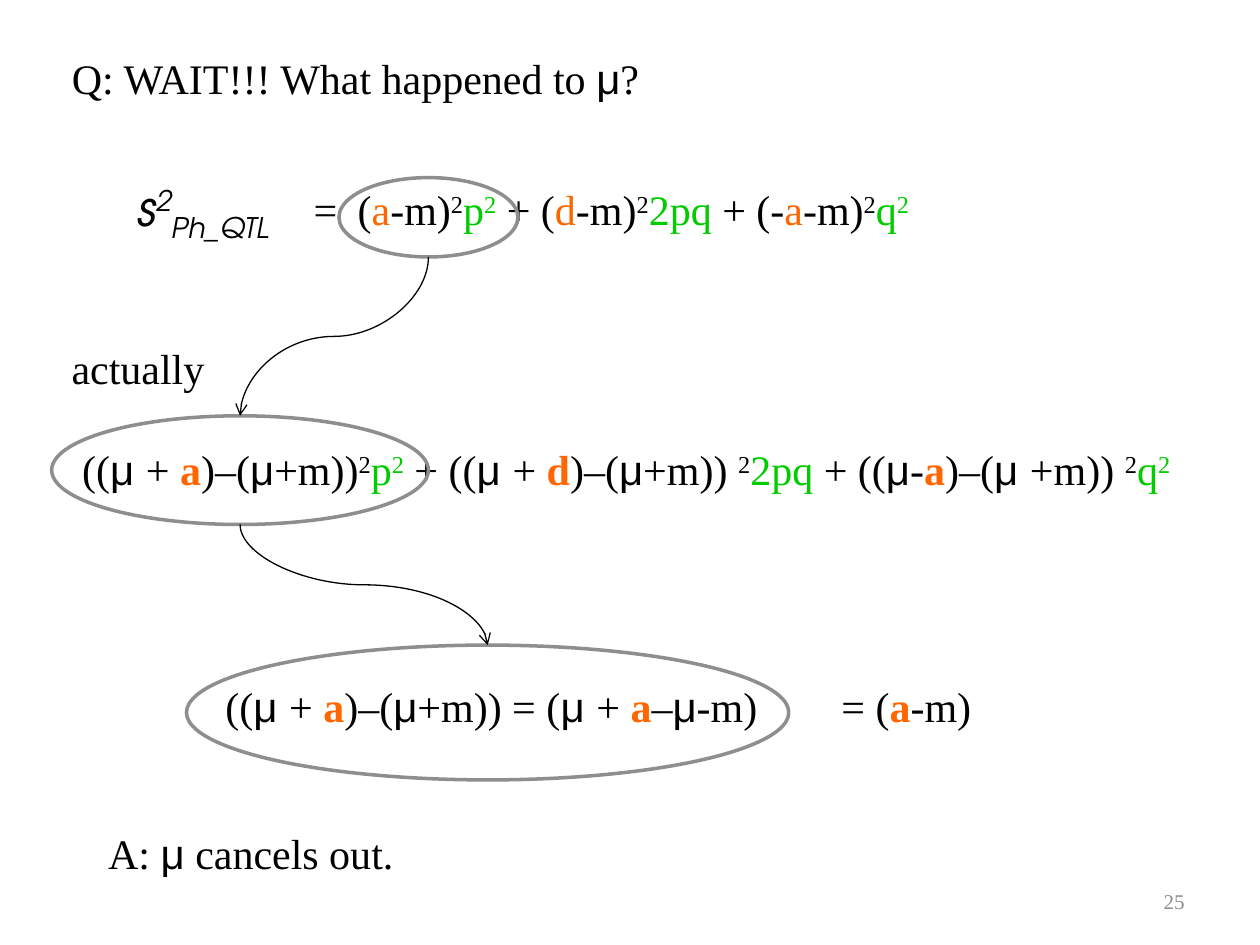
import pptx
import pptx.dml.color
import pptx.enum.shapes
import pptx.enum.text
import pptx.oxml.ns
import pptx.util
from lxml import etree

RGB = pptx.dml.color.RGBColor
BLACK = RGB(0x00, 0x00, 0x00)
ORANGE = RGB(0xFF, 0x66, 0x00)
GREEN = RGB(0x00, 0xCC, 0x00)
GREY = RGB(0x8E, 0x8E, 0x8E)
NUMBER_GREY = RGB(0x8C, 0x8C, 0x8C)
SERIF, SANS, SCRIPT = "Times New Roman", "Arial", "TeX Gyre Adventor"
WIDTH, HEIGHT = pptx.util.Inches(10), pptx.util.Inches(7.5)

QUESTION = "Q: WAIT!!! What happened to |μ|?"
VARIANCE = "i~s|i^~2|i_~Ph_QTL"
SHORT_FORM = ("=\t(|o~a|-m)|^~2|g~p|g^~2| + (|o~d|-m)|^~2|g~2pq"
              "| + (-|o~a|-m)|^~2|g~q|g^~2")
FULL_FORM = (" ((|μ |+ |ob~a|)–(|μ|+m))|^~2|g~p|g^~2"
             "| + ((|μ |+ |ob~d|)–(|μ|+m)) |^~2|g~2pq"
             "| + ((|μ|-|ob~a|)–(|μ |+m)) |^~2|g~q|g^~2")
CANCELLING = "((|μ |+ |ob~a|)–(|μ|+m)) = (|μ |+ |ob~a|–|μ|-m)\t= (|ob~a|-m)"
ANSWER = "A: |μ| cancels out."


def box(x, y, w, h):
    """Turn percentages of the slide into left, top, width and height."""
    return [int(share * side / 100)
            for share, side in zip((x, y, w, h), (WIDTH, HEIGHT) * 2)]


def child(parent, tag, **attributes):
    """Append a drawing element to a parent."""
    return etree.SubElement(parent, pptx.oxml.ns.qn(tag), attributes)


def write(p, markup, size=24, font=SERIF):
    """Add runs split by |, each with optional style letters before ~."""
    for part in markup.split("|"):
        style, _, text = part.rpartition("~")
        r = p.add_run()
        r.text = text
        f = r.font
        f.size = pptx.util.Pt(size)
        f.name = SANS if "μ" in text else font
        f.color.rgb = ORANGE if "o" in style else GREEN if "g" in style else BLACK
        f.bold = "b" in style
        f.italic = "i" in style
        if "^" in style or "_" in style:
            f._element.set("baseline", "30000" if "^" in style else "-25000")


def add_text(s, place, *lines, wrap=False, tab=None, gap=0, **look):
    """Add a text box with one marked-up paragraph per line."""
    tf = s.shapes.add_textbox(*box(*place)).text_frame
    tf.word_wrap = wrap
    for i, line in enumerate(lines):
        p = tf.add_paragraph() if i else tf.paragraphs[0]
        if i:
            p.space_before = pptx.util.Pt(gap)
        if tab:
            tabs = child(p._p.get_or_add_pPr(), "a:tabLst")
            child(tabs, "a:tab", pos=str(int(tab * WIDTH / 100)), algn="l")
        write(p, line, **look)


def add_title(s, place, markup):
    """Place the title and fill it with marked-up text."""
    sp = s.shapes.title
    sp.left, sp.top, sp.width, sp.height = box(*place)
    tf = sp.text_frame
    tf.word_wrap = False
    tf.auto_size = pptx.enum.text.MSO_AUTO_SIZE.NONE
    tf.vertical_anchor = pptx.enum.text.MSO_ANCHOR.TOP
    tf.paragraphs[0].alignment = pptx.enum.text.PP_ALIGN.LEFT
    write(tf.paragraphs[0], markup)


def add_ring(s, place):
    """Add a hollow grey ellipse."""
    sp = s.shapes.add_shape(pptx.enum.shapes.MSO_SHAPE.OVAL, *box(*place))
    sp.shadow.inherit = False
    sp.fill.background()
    sp.line.color.rgb = GREY
    sp.line.width = pptx.util.Pt(2)
    return sp


def add_curve(s, upper, lower):
    """Draw a curved arrow from the bottom of one ring to the top of the next."""
    x1, y1 = upper.left + upper.width // 2, upper.top + upper.height
    x2, y2 = lower.left + lower.width // 2, lower.top
    cx, cy = (x1 + x2) // 2, (y1 + y2) // 2
    half_w, half_h = (y2 - y1) // 2, abs(x2 - x1) // 2
    side = 1 if x2 > x1 else -1
    c = s.shapes.add_connector(
        pptx.enum.shapes.MSO_CONNECTOR.CURVE,
        cx + side * half_w, cy - half_h, cx - side * half_w, cy + half_h)
    c.line.color.rgb = BLACK
    c.line.width = pptx.util.Pt(0.75)
    child(c.line._get_or_add_ln(), "a:tailEnd", type="arrow")
    spPr = c._element.spPr
    child(spPr, "a:effectLst")
    spPr.xfrm.set("rot", str((270 if side > 0 else 90) * 60000))


def add_number(s, place, number):
    """Add the slide number at the right of its box."""
    tf = s.shapes.add_textbox(*box(*place)).text_frame
    tf.word_wrap = True
    tf.vertical_anchor = pptx.enum.text.MSO_ANCHOR.MIDDLE
    p = tf.paragraphs[0]
    p.alignment = pptx.enum.text.PP_ALIGN.RIGHT
    write(p, number, size=12)
    p.runs[0].font.color.rgb = NUMBER_GREY


def main():
    """Build the slide and save it."""
    prs = pptx.Presentation()
    prs.slide_width, prs.slide_height = WIDTH, HEIGHT
    s = prs.slides.add_slide(prs.slide_layouts[5])
    add_title(s, (4.7, 4.93, 48.3, 6.67), QUESTION)
    add_text(s, (23.9, 18.8, 69.2, 10.27), SHORT_FORM, wrap=True, tab=3.5)
    add_number(s, (71.7, 92.67, 23.3, 5.33), "25")
    add_text(s, (4.7, 35.6, 92.4, 21.07), "actually", FULL_FORM,
             wrap=True, gap=29)
    add_text(s, (16.9, 71.33, 61.6, 6.67), CANCELLING, tab=48.9)
    rings = [add_ring(s, place) for place in (
        (26.9, 18.8, 14.2, 8.4),
        (4.1, 44, 29.9, 11.5),
        (14.8, 68.27, 47.8, 14.27))]
    add_text(s, (9.9, 18.13, 14.1, 7.6), VARIANCE, size=28, font=SCRIPT)
    for upper, lower in zip(rings, rings[1:]):
        add_curve(s, upper, lower)
    add_text(s, (7.6, 86.93, 24.9, 6.67), ANSWER)
    prs.save("out.pptx")


if __name__ == "__main__":
    main()
